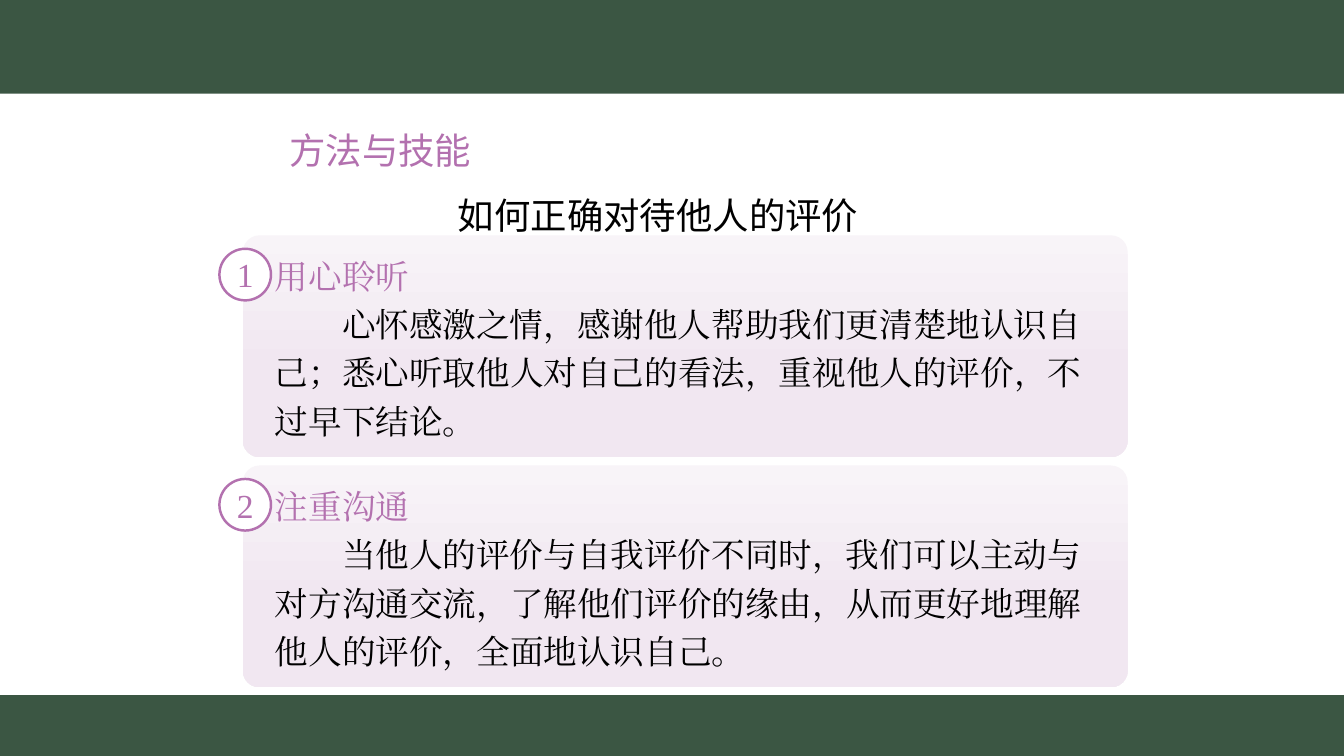
from pptx import Presentation
from pptx import util as u
from pptx.dml.color import RGBColor
from pptx.enum import shapes, text
from pptx.oxml import ns

GREEN = RGBColor(0x3B, 0x56, 0x43)
PURPLE = RGBColor(0xB3, 0x71, 0xAF)
BLACK = RGBColor(0, 0, 0)
WHITE = RGBColor(0xFF, 0xFF, 0xFF)
PANEL_TOP = RGBColor(0xF8, 0xF4, 0xF8)
PANEL_BOTTOM = RGBColor(0xF1, 0xE7, 0xF1)

WIDTH, HEIGHT = 33.87, 19.05
METHODS = [
    ("用心聆听", "心怀感激之情，感谢他人帮助我们更清楚地认识自己；"
     "悉心听取他人对自己的看法，重视他人的评价，不过早下结论。"),
    ("注重沟通", "当他人的评价与自我评价不同时，我们可以主动与对方沟通交流，"
     "了解他们评价的缘由，从而更好地理解他人的评价，全面地认识自己。"),
]


def place(left, top, width, height):
    """Return a box given in centimetres as lengths."""
    return [u.Cm(side) for side in (left, top, width, height)]


def add_block(slide, preset, box, fill=None, outline=None):
    """Add a preset shape without shadow."""
    block = slide.shapes.add_shape(preset, *place(*box))
    block.shadow.inherit = False
    if fill is not None:
        block.fill.solid()
        block.fill.fore_color.rgb = fill
    if outline is None:
        block.line.fill.background()
    else:
        block.line.color.rgb = outline
        block.line.width = u.Pt(1.75)
    return block


def add_text(slide, box, lines, size=24, font="Times New Roman", spacing=None,
             align=text.PP_ALIGN.LEFT, wrap=True, inset_top=0.13):
    """Add a text box from lines of (wording, colour, first-line indent)."""
    frame = slide.shapes.add_textbox(*place(*box)).text_frame
    frame.word_wrap = wrap
    frame.margin_top = u.Cm(inset_top)
    for number, (wording, colour, indent) in enumerate(lines):
        paragraph = frame.add_paragraph() if number else frame.paragraphs[0]
        paragraph.alignment = align
        if spacing:
            paragraph.line_spacing = u.Pt(spacing)
        if indent:
            paragraph._p.get_or_add_pPr().set("indent", str(u.Cm(indent)))
        run = paragraph.add_run()
        run.text = wording
        run.font.size = u.Pt(size)
        run.font.name = font
        run.font.color.rgb = colour
        east_asian = run._r.get_or_add_rPr().makeelement(
            ns.qn("a:ea"), {"typeface": font})
        run.font._element.find(ns.qn("a:latin")).addnext(east_asian)


def add_bands(slide):
    """Draw the green bands along the top and bottom edges."""
    for top, height in ((0, 2.36), (17.52, HEIGHT - 17.52)):
        add_block(slide, shapes.MSO_SHAPE.RECTANGLE,
                  (0, top, WIDTH, height), GREEN)


def add_heading(slide, left, top, width, height):
    """Write the section name and the question below it."""
    add_text(slide, (left, top, width, height),
             [("方法与技能", PURPLE, 1.83),
              ("如何正确对待他人的评价", BLACK, 6.08)],
             size=26, font="Arial", spacing=46, inset_top=0.22)


def add_method(slide, left, top, width, height, number, title, advice):
    """Draw one numbered panel with its title and advice."""
    panel = add_block(slide, shapes.MSO_SHAPE.ROUNDED_RECTANGLE,
                      (left, top, width, height))
    panel.adjustments[0] = 0.076
    panel.fill.gradient()
    panel.fill.gradient_angle = 270
    stops = panel.fill.gradient_stops
    for stop, position, colour in zip(stops, (0, 0.6),
                                      (PANEL_TOP, PANEL_BOTTOM)):
        stop.position = position
        stop.color.rgb = colour
    add_text(slide, (left + 0.56, top + 0.19, width - 0.86, 5.11),
             [(title, PURPLE, 0), (advice, BLACK, 1.69)], spacing=34.4)
    add_block(slide, shapes.MSO_SHAPE.OVAL,
              (left - 0.59, top + 0.34, 1.3, 1.3), WHITE, PURPLE)
    add_text(slide, (left - 0.41, top + 0.35, 0.94, 1.27),
             [(str(number), PURPLE, 0)], wrap=False,
             align=text.PP_ALIGN.CENTER)


def main():
    """Build and save the slide."""
    deck = Presentation()
    deck.slide_width, deck.slide_height = u.Cm(WIDTH), u.Cm(HEIGHT)
    slide = deck.slides.add_slide(deck.slide_layouts[6])
    add_bands(slide)
    add_heading(slide, 5.21, 2.49, 23.24, 3.4)
    for index, (title, advice) in enumerate(METHODS):
        add_method(slide, 6.12, 5.93 + index * 5.8, 22.3, 5.59,
                   index + 1, title, advice)
    deck.save("out.pptx")


if __name__ == "__main__":
    main()
